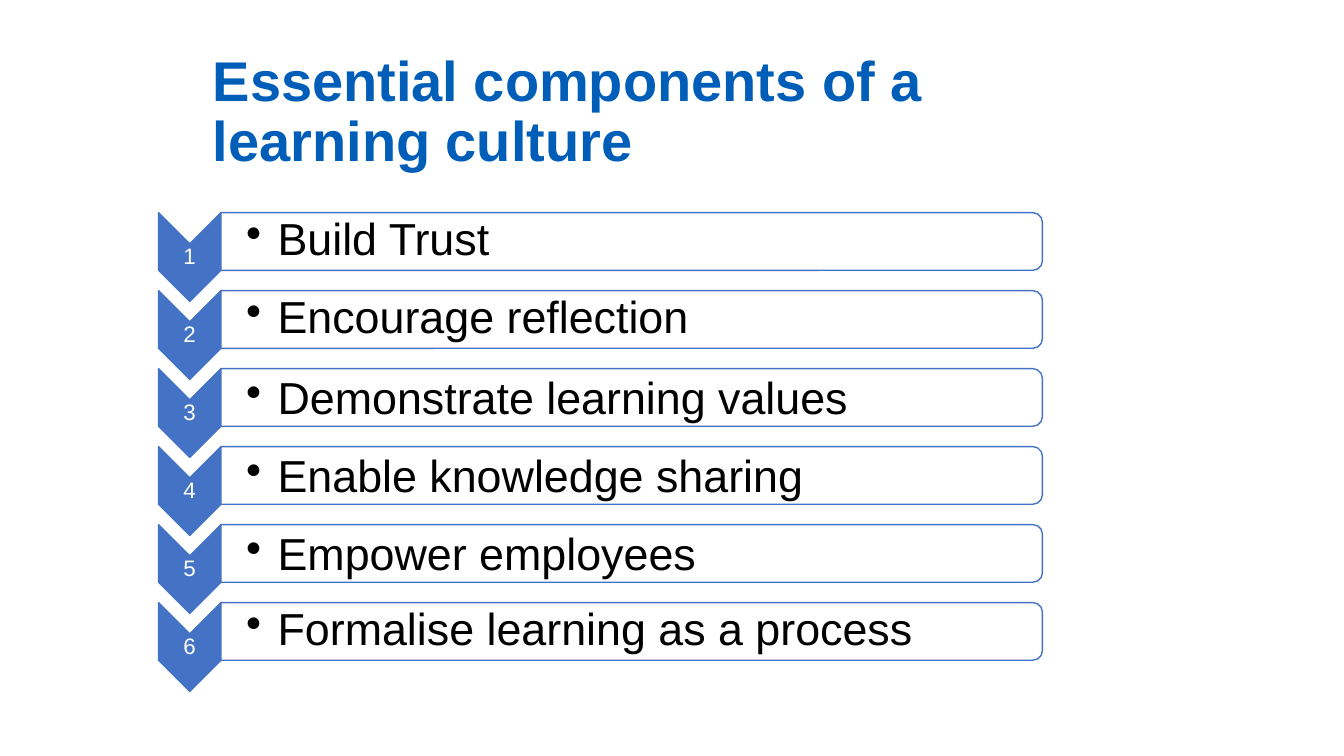
from dataclasses import dataclass

from lxml import etree
from pptx import Presentation
from pptx.dml.color import RGBColor
from pptx.enum.shapes import MSO_SHAPE
from pptx.enum.text import MSO_ANCHOR, PP_ALIGN
from pptx.oxml.ns import qn
from pptx.util import Pt

CHEVRON = MSO_SHAPE.CHEVRON
CARD = MSO_SHAPE.ROUND_2_SAME_RECTANGLE
MIDDLE = MSO_ANCHOR.MIDDLE
LEFT = PP_ALIGN.LEFT
CENTER = PP_ALIGN.CENTER


@dataclass(frozen=True)
class Theme:
    font: str = "Arial"
    title: RGBColor = RGBColor(0x00, 0x5E, 0xB8)
    accent: RGBColor = RGBColor(0x44, 0x72, 0xC4)
    white: RGBColor = RGBColor(0xFF, 0xFF, 0xFF)
    black: RGBColor = RGBColor(0x00, 0x00, 0x00)
    head: int = 40
    body: int = 32
    digit: int = 16


THEME = Theme()
TOP = 151.9
PITCH = 55.7
ITEMS = [
    ("Build Trust", 0),
    ("Encourage reflection", 0),
    ("Demonstrate learning values", 2),
    ("Enable knowledge sharing", 2),
    ("Empower employees", 2),
    ("Formalise learning as a process", 0),
]


def add_turned(slide, kind, left, top, width, height, fill):
    shape = slide.shapes.add_shape(
        kind,
        Pt(left + (width - height) / 2),
        Pt(top + (height - width) / 2),
        Pt(height),
        Pt(width),
    )
    shape.rotation = 90
    shape.shadow.inherit = False
    shape.fill.solid()
    shape.fill.fore_color.rgb = fill
    shape.line.color.rgb = THEME.accent
    shape.line.width = Pt(1)


def add_bullet(para):
    props = para._p.get_or_add_pPr()
    props.set("marL", str(Pt(22.5)))
    props.set("indent", str(-Pt(22.5)))
    etree.SubElement(props, qn("a:buChar")).set("char", "•")


def add_text(slide, text, left, top, width, height, size, color,
             align=LEFT, inset=0, bold=False, bullet=False):
    box = slide.shapes.add_textbox(Pt(left), Pt(top), Pt(width), Pt(height))
    frame = box.text_frame
    frame.word_wrap = True
    frame.vertical_anchor = MIDDLE
    frame.margin_left = Pt(inset)
    frame.margin_top = frame.margin_right = frame.margin_bottom = 0
    para = frame.paragraphs[0]
    para.text = text
    para.alignment = align
    para.line_spacing = 0.9
    if bullet:
        add_bullet(para)
    font = para.font
    font.name = THEME.font
    font.size = Pt(size)
    font.bold = bold
    font.color.rgb = color


def add_row(slide, number, text, drop):
    top = TOP + (number - 1) * PITCH
    add_turned(slide, CHEVRON, 113.2, top, 44.6, 63.4, THEME.accent)
    add_text(slide, str(number), 113.2, top + 22.3, 44.6, 18.8,
             THEME.digit, THEME.white, align=CENTER)
    add_turned(slide, CARD, 157.8, top, 586.8, 41.2, THEME.white)
    add_text(slide, text, 157.8, top + 1.9 + drop, 585, 37.2,
             THEME.body, THEME.black, inset=18, bullet=True)


def main():
    deck = Presentation()
    deck.slide_width = Pt(960)
    deck.slide_height = Pt(540)
    slide = deck.slides.add_slide(deck.slide_layouts[6])
    add_text(slide, "Essential components of a learning culture",
             152, 28.8, 611.3, 104.4, THEME.head, THEME.title, bold=True)
    for number, (text, drop) in enumerate(ITEMS, 1):
        add_row(slide, number, text, drop)
    deck.save("out.pptx")


if __name__ == "__main__":
    main()
